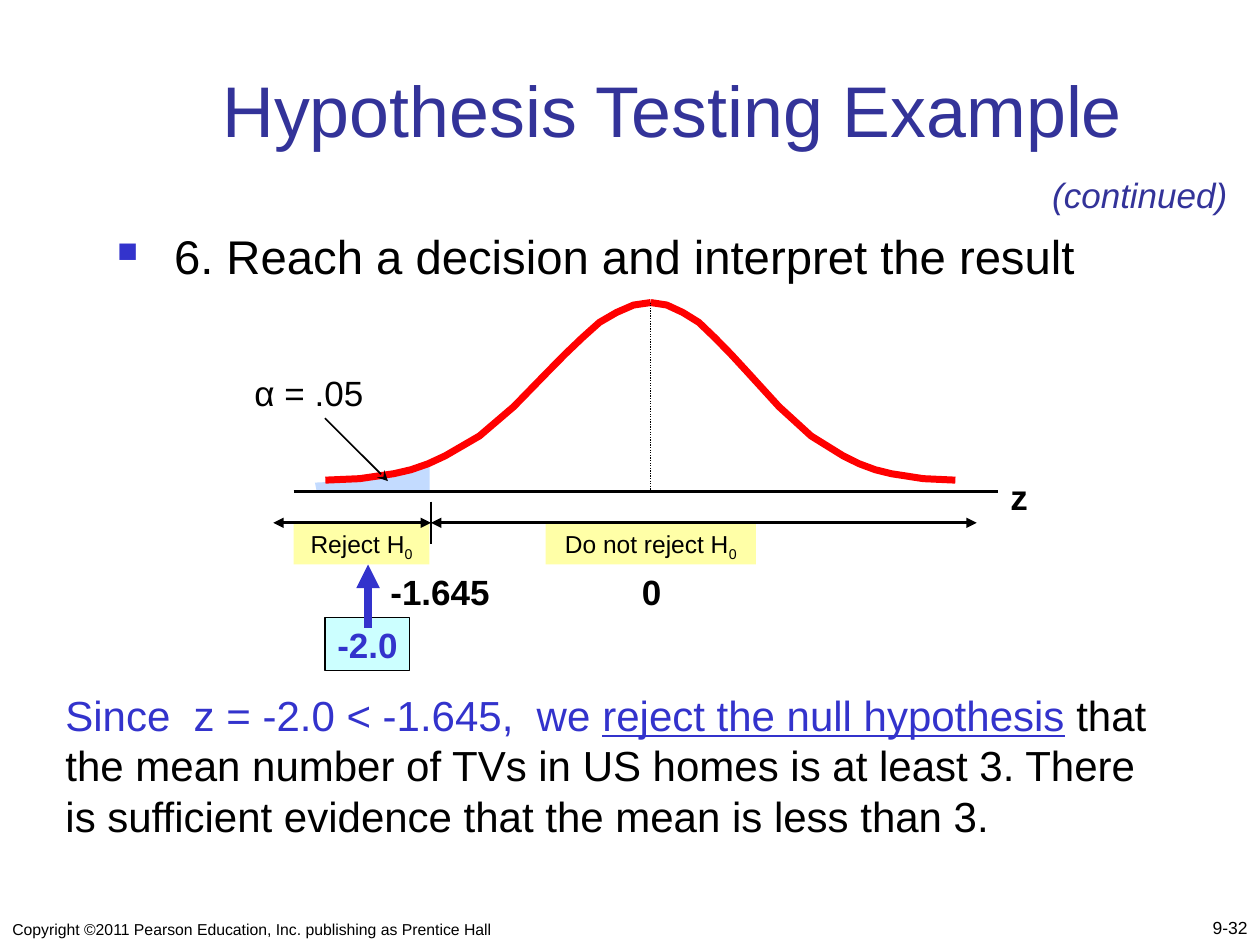
from lxml import etree
from pptx import Presentation
from pptx import util as u
from pptx.dml.color import RGBColor
from pptx.enum import dml, shapes, text
from pptx.oxml.ns import qn

BLACK, BLUE, NAVY = "000000", "3333CC", "333399"
LEFT, CENTER, RIGHT = text.PP_ALIGN.LEFT, text.PP_ALIGN.CENTER, text.PP_ALIGN.RIGHT


def color(value):
    return RGBColor.from_string(value)


def write(shape, runs, size, hue=BLACK, align=LEFT, anchor=text.MSO_ANCHOR.TOP, bold=False, italic=False):
    frame = shape.text_frame
    frame.word_wrap = True
    frame.vertical_anchor = anchor
    paragraph = frame.paragraphs[0]
    paragraph.alignment = align
    for content in runs:
        paragraph.add_run().text = content
    font = paragraph.font
    font.name, font.size, font.bold, font.italic = "Arial", u.Pt(size), bold, italic
    font.color.rgb = color(hue)
    return paragraph


presentation = Presentation()
presentation.slide_width, presentation.slide_height = u.Cm(25.4), u.Cm(19.05)
slide = presentation.slides.add_slide(presentation.slide_layouts[5])

title = slide.shapes.title
title.left, title.top, title.width, title.height = u.Cm(2.74), u.Cm(1.07), u.Cm(21.64), u.Cm(2.11)
write(title, ["Hypothesis Testing Example"], 41, NAVY, CENTER, text.MSO_ANCHOR.BOTTOM)

boxes = [
    (6.55, 12.45, 1.7, 1.07, "CCFFFF", []),
    (5.92, 10.54, 2.74, 0.84, "FFFFA7", ["Reject H", "0"]),
    (11, 10.54, 4.24, 0.84, "FFFFA7", ["Do not reject H", "0"]),
]
for left, top, width, height, fill, runs in boxes:
    box = slide.shapes.add_shape(
        shapes.MSO_SHAPE.RECTANGLE, u.Cm(left), u.Cm(top), u.Cm(width), u.Cm(height))
    box.shadow.inherit = False
    box.fill.solid()
    box.fill.fore_color.rgb = color(fill)
    if runs:
        box.line.fill.background()
        paragraph = write(box, runs, 14, align=CENTER)
        paragraph.runs[1].font._element.set("baseline", "-25000")
    else:
        box.line.color.rgb = color(BLACK)
        box.line.width = u.Pt(0.75)

tail_points = [(6.38, 9.88), (6.35, 9.73), (7.37, 9.68), (8.03, 9.5), (8.36, 9.42), (8.66, 9.27), (8.66, 9.91), (6.38, 9.91)]
steps = [0, 2, 3, 4, 5, 6, 7, 9, 11, 13, 14, 15, 16, 17, 18, 19]
heights = [9.68, 9.65, 9.6, 9.55, 9.47, 9.35, 9.19, 8.79, 8.2, 7.49, 7.14, 6.81, 6.5, 6.3, 6.15, 6.1]
mean = 13.12
halves = [[(mean + reach * (1 - step / 19), y) for step, y in zip(steps, heights)] for reach in (-6.56, 6.14)]
for points, closed in [(tail_points, True), (halves[0], False), (halves[1], False)]:
    (start_x, start_y), *rest = [(u.Cm(x), u.Cm(y)) for x, y in points]
    builder = slide.shapes.build_freeform(start_x, start_y)
    builder.add_line_segments(rest, close=closed)
    outline = builder.convert_to_shape()
    outline.shadow.inherit = False
    if closed:
        outline.fill.solid()
        outline.fill.fore_color.rgb = color("C3DBFF")
        outline.line.fill.background()
    else:
        outline.fill.background()
        outline.line.color.rgb = color("FF0000")
        outline.line.width = u.Pt(4)

labels = [
    (4.88, 7.37, 3.61, "α = .05", 20, BLACK, LEFT, False, False),
    (7.62, 11.38, 2.74, "-1.645", 20, BLACK, LEFT, True, False),
    (12.5, 11.38, 1.27, "0", 20, BLACK, CENTER, True, False),
    (6.55, 12.45, 1.91, "-2.0", 20, BLUE, LEFT, True, False),
    (20.12, 9.47, 1.07, "z", 20, BLACK, LEFT, True, False),
    (20.96, 3.38, 4.09, "(continued)", 20, NAVY, LEFT, False, True),
    (0, 18.21, 12.9, "Copyright ©2011 Pearson Education, Inc. publishing as Prentice Hall", 9, BLACK, LEFT, False, False),
    (20.12, 18.19, 5.28, "9-32", 10, BLACK, RIGHT, False, False),
]
for left, top, width, content, size, hue, align, bold, italic in labels:
    footer = size < 20
    label = slide.shapes.add_textbox(u.Cm(left), u.Cm(top), u.Cm(width), u.Cm(0.84 if footer else 1.09))
    anchor = text.MSO_ANCHOR.BOTTOM if footer else text.MSO_ANCHOR.TOP
    write(label, [content], size, hue, align, anchor, bold, italic)
    label.text_frame.word_wrap = not italic

step_box = slide.shapes.add_textbox(u.Cm(2.11), u.Cm(4.45), u.Cm(22.43), u.Cm(1.7))
paragraph = step_box.text_frame.paragraphs[0]
properties = paragraph._p.get_or_add_pPr()
properties.set("marL", str(u.Cm(1.15)))
properties.set("indent", str(-u.Cm(1.15)))
bullet_color = etree.SubElement(properties, qn("a:buClr"))
etree.SubElement(bullet_color, qn("a:srgbClr"), val=BLUE)
etree.SubElement(properties, qn("a:buSzPct"), val="60000")
etree.SubElement(properties, qn("a:buChar"), char="■")
write(step_box, ["6. Reach a decision and interpret the result"], 27)

conclusion = slide.shapes.add_textbox(u.Cm(1.07), u.Cm(13.77), u.Cm(22.43), u.Cm(3.33))
paragraph = write(conclusion, [
    "Since  z = -2.0 < -1.645,  we ",
    "reject the null hypothesis",
    " that the mean number of TVs in US homes is at least 3. There is sufficient evidence that the mean is less than 3.",
], 24)
for run in paragraph.runs[:2]:
    run.font.color.rgb = color(BLUE)
paragraph.runs[1].font.underline = True

lines = [
    (5.92, 9.91, 20.12, 9.91, BLACK, 2, None, None),
    (6.55, 8.43, 7.82, 9.7, BLACK, 1, None, "stealth"),
    (mean, 6.1, mean, 9.91, BLACK, 0.75, None, None),
    (8.69, 10.11, 8.69, 10.97, BLACK, 1.5, None, None),
    (8.69, 10.54, 19.69, 10.54, BLACK, 1.5, "triangle", "triangle"),
    (5.51, 10.54, 8.69, 10.54, BLACK, 1.5, "triangle", "triangle"),
    (7.42, 12.65, 7.42, 11.38, BLUE, 4.5, None, "triangle"),
]
for x1, y1, x2, y2, hue, width, head, tail in lines:
    line = slide.shapes.add_connector(
        shapes.MSO_CONNECTOR.STRAIGHT, u.Cm(x1), u.Cm(y1), u.Cm(x2), u.Cm(y2))
    line.line.color.rgb = color(hue)
    line.line.width = u.Pt(width)
    if width == 0.75:
        line.line.dash_style = dml.MSO_LINE.ROUND_DOT
    for tag, arrow in (("a:headEnd", head), ("a:tailEnd", tail)):
        if arrow:
            etree.SubElement(line.line._get_or_add_ln(), qn(tag), type=arrow)
    etree.SubElement(line._element.spPr, qn("a:effectLst"))

presentation.save("out.pptx")
